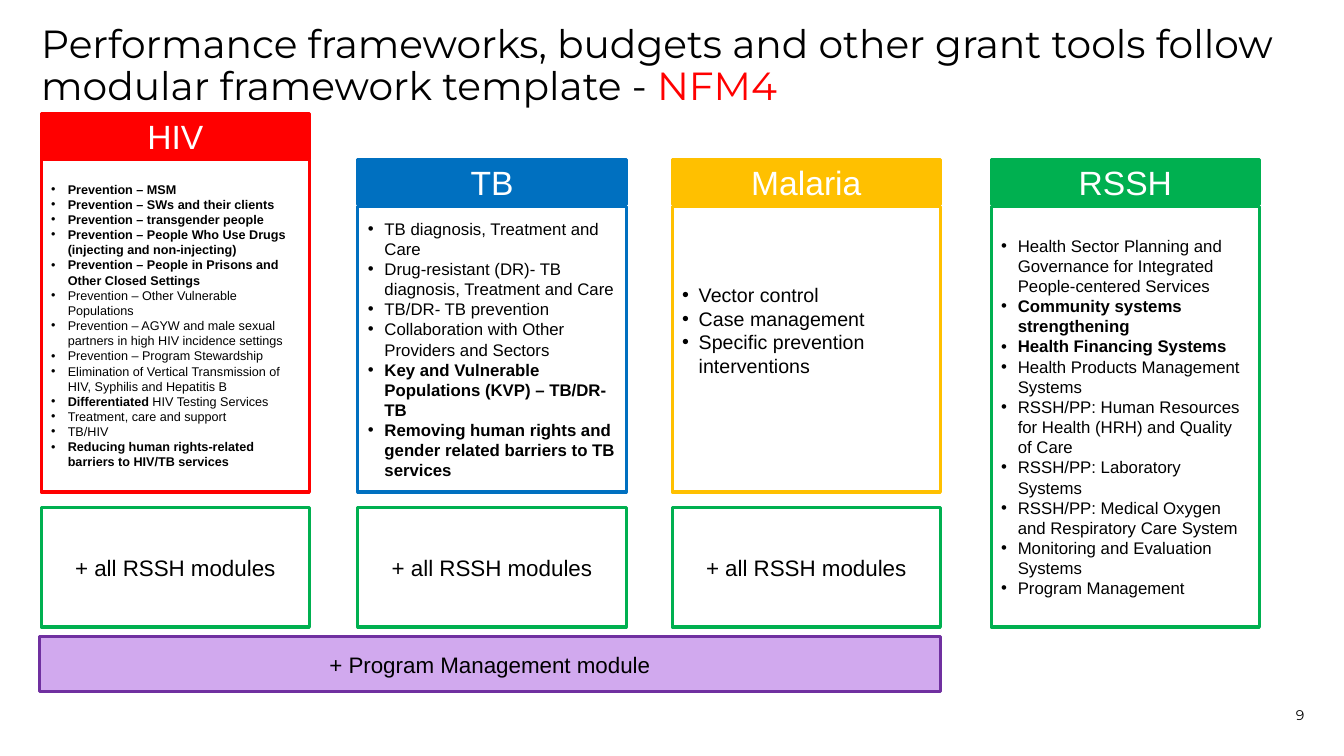
import pptx
import pptx.util
import pptx.dml.color
import pptx.enum.shapes
import pptx.enum.text
import pptx.oxml.ns
import lxml.etree

Cm = pptx.util.Cm
Pt = pptx.util.Pt
RGBColor = pptx.dml.color.RGBColor
ALIGN = pptx.enum.text.PP_ALIGN
ANCHOR = pptx.enum.text.MSO_ANCHOR

BLACK = RGBColor(0x00, 0x00, 0x00)
WHITE = RGBColor(0xFF, 0xFF, 0xFF)
RED = RGBColor(0xFF, 0x00, 0x00)
BLUE = RGBColor(0x00, 0x70, 0xC0)
AMBER = RGBColor(0xFF, 0xC0, 0x00)
GREEN = RGBColor(0x00, 0xB0, 0x50)
PURPLE = RGBColor(0x70, 0x30, 0xA0)
LILAC = RGBColor(0xD1, 0xA9, 0xEE)

TITLE = [
    ("Performance frameworks, budgets and other grant tools follow modular framework template - ", BLACK),
    ("NFM4", RED),
]
PAGE_NUMBER = "9"
SHARED_MODULES = "+ all RSSH modules"
PROGRAM_MODULE = "+ Program Management module"

# Each module is a pair: bold part, regular part.
HIV_MODULES = [
    ("Prevention – MSM", ""),
    ("Prevention – SWs and their clients", ""),
    ("Prevention – transgender people", ""),
    ("Prevention – People Who Use Drugs (injecting and non-injecting)", ""),
    ("Prevention – People in Prisons and Other Closed Settings", ""),
    ("", "Prevention – Other Vulnerable Populations"),
    ("", "Prevention – AGYW and male sexual partners in high HIV incidence settings"),
    ("", "Prevention – Program Stewardship"),
    ("", "Elimination of Vertical Transmission of HIV, Syphilis and Hepatitis B"),
    ("Differentiated", " HIV Testing Services"),
    ("", "Treatment, care and support"),
    ("", "TB/HIV"),
    ("Reducing human rights-related barriers to HIV/TB services", ""),
]
TB_MODULES = [
    ("", "TB diagnosis, Treatment and Care"),
    ("", "Drug-resistant (DR)- TB diagnosis, Treatment and Care"),
    ("", "TB/DR- TB prevention"),
    ("", "Collaboration with Other Providers and Sectors"),
    ("Key and Vulnerable Populations (KVP) – TB/DR-TB", ""),
    ("Removing human rights and gender related barriers to TB services", ""),
]
MALARIA_MODULES = [
    ("", "Vector control"),
    ("", "Case management"),
    ("", "Specific prevention interventions"),
]
RSSH_MODULES = [
    ("", "Health Sector Planning and Governance for Integrated People-centered Services"),
    ("Community systems strengthening", ""),
    ("Health Financing Systems", ""),
    ("", "Health Products Management Systems"),
    ("", "RSSH/PP: Human Resources for Health (HRH) and Quality of Care"),
    ("", "RSSH/PP: Laboratory Systems"),
    ("", "RSSH/PP: Medical Oxygen and Respiratory Care System"),
    ("", "Monitoring and Evaluation Systems"),
    ("", "Program Management"),
]

COLUMN_WIDTH = 6.76
HEADER_HEIGHT = 1.14
LIST_BOTTOM = 12.4
SHARED_TOP = 12.8
SHARED_BOTTOM = 15.8
COLUMNS = [
    dict(name="HIV", color=RED, left=1.04, header_top=2.87, list_top=4.01,
         size=9, modules=HIV_MODULES, shared=True, bottom_inset=0.13),
    dict(name="TB", color=BLUE, left=9.02, header_top=4.01, list_top=5.21,
         size=12, modules=TB_MODULES, shared=True, bottom_inset=0.13),
    dict(name="Malaria", color=AMBER, left=16.94, header_top=4.01, list_top=5.21,
         size=14, modules=MALARIA_MODULES, shared=True, bottom_inset=1.1),
    dict(name="RSSH", color=GREEN, left=24.98, header_top=4.01, list_top=5.21,
         size=12, modules=RSSH_MODULES, shared=False, bottom_inset=0.13),
]


def style(para, size, color, name="Arial"):
    para.font.size = Pt(size)
    para.font.name = name
    para.font.color.rgb = color


def add_box(page, left, top, width, height, line, fill=None):
    box = page.shapes.add_shape(pptx.enum.shapes.MSO_SHAPE.RECTANGLE,
                                Cm(left), Cm(top), Cm(width), Cm(height))
    box.shadow.inherit = False
    if fill is None:
        box.fill.background()
    else:
        box.fill.solid()
        box.fill.fore_color.rgb = fill
    box.line.color.rgb = line
    box.line.width = Pt(2.25)
    box.text_frame.word_wrap = True
    box.text_frame.vertical_anchor = ANCHOR.MIDDLE
    return box


def add_label(box, text, size, color):
    para = box.text_frame.paragraphs[0]
    para.text = text
    para.alignment = ALIGN.CENTER
    style(para, size, color)


def add_bullet(para):
    properties = para._p.get_or_add_pPr()
    properties.set("marL", str(Cm(0.42)))
    properties.set("indent", str(-Cm(0.42)))
    for tag, key, value in (("a:buFont", "typeface", "Arial"), ("a:buChar", "char", "•")):
        bullet = lxml.etree.SubElement(properties, pptx.oxml.ns.qn(tag))
        bullet.set(key, value)


def add_modules(box, modules, size):
    frame = box.text_frame
    for index, parts in enumerate(modules):
        para = frame.add_paragraph() if index else frame.paragraphs[0]
        para.alignment = ALIGN.LEFT
        add_bullet(para)
        style(para, size, BLACK)
        for text, bold in zip(parts, (True, False)):
            if text:
                span = para.add_run()
                span.text = text
                span.font.bold = bold


def add_text(page, left, top, width, height, anchor):
    box = page.shapes.add_textbox(Cm(left), Cm(top), Cm(width), Cm(height))
    frame = box.text_frame
    frame.word_wrap = True
    frame.vertical_anchor = anchor
    frame.margin_left = frame.margin_right = frame.margin_top = frame.margin_bottom = 0
    return frame.paragraphs[0]


def add_column(page, column):
    left, color = column["left"], column["color"]
    bottom = LIST_BOTTOM if column["shared"] else SHARED_BOTTOM
    body = add_box(page, left, column["list_top"], COLUMN_WIDTH,
                   bottom - column["list_top"], color)
    body.text_frame.margin_bottom = Cm(column["bottom_inset"])
    add_modules(body, column["modules"], column["size"])
    header = add_box(page, left, column["header_top"], COLUMN_WIDTH, HEADER_HEIGHT, color, color)
    add_label(header, column["name"], 24, WHITE)
    if column["shared"]:
        shared = add_box(page, left, SHARED_TOP, COLUMN_WIDTH, SHARED_BOTTOM - SHARED_TOP, GREEN)
        add_label(shared, SHARED_MODULES, 16, BLACK)


def main():
    deck = pptx.Presentation()
    deck.slide_width, deck.slide_height = Cm(33.87), Cm(19.05)
    page = deck.slides.add_slide(deck.slide_layouts[6])

    title = add_text(page, 1.04, 0.61, 32.16, 2.72, ANCHOR.TOP)
    title.line_spacing = 0.9
    style(title, 28, BLACK, "Montserrat")
    for text, color in TITLE:
        span = title.add_run()
        span.text = text
        span.font.color.rgb = color

    number = add_text(page, 30.38, 17.22, 2.49, 1.02, ANCHOR.BOTTOM)
    number.text = PAGE_NUMBER
    number.alignment = ALIGN.RIGHT
    style(number, 10, BLACK, "Montserrat")

    for column in COLUMNS:
        add_column(page, column)
    program = add_box(page, 0.99, 16.05, 22.71, 1.37, PURPLE, LILAC)
    add_label(program, PROGRAM_MODULE, 16, BLACK)

    deck.save("out.pptx")


if __name__ == "__main__":
    main()
